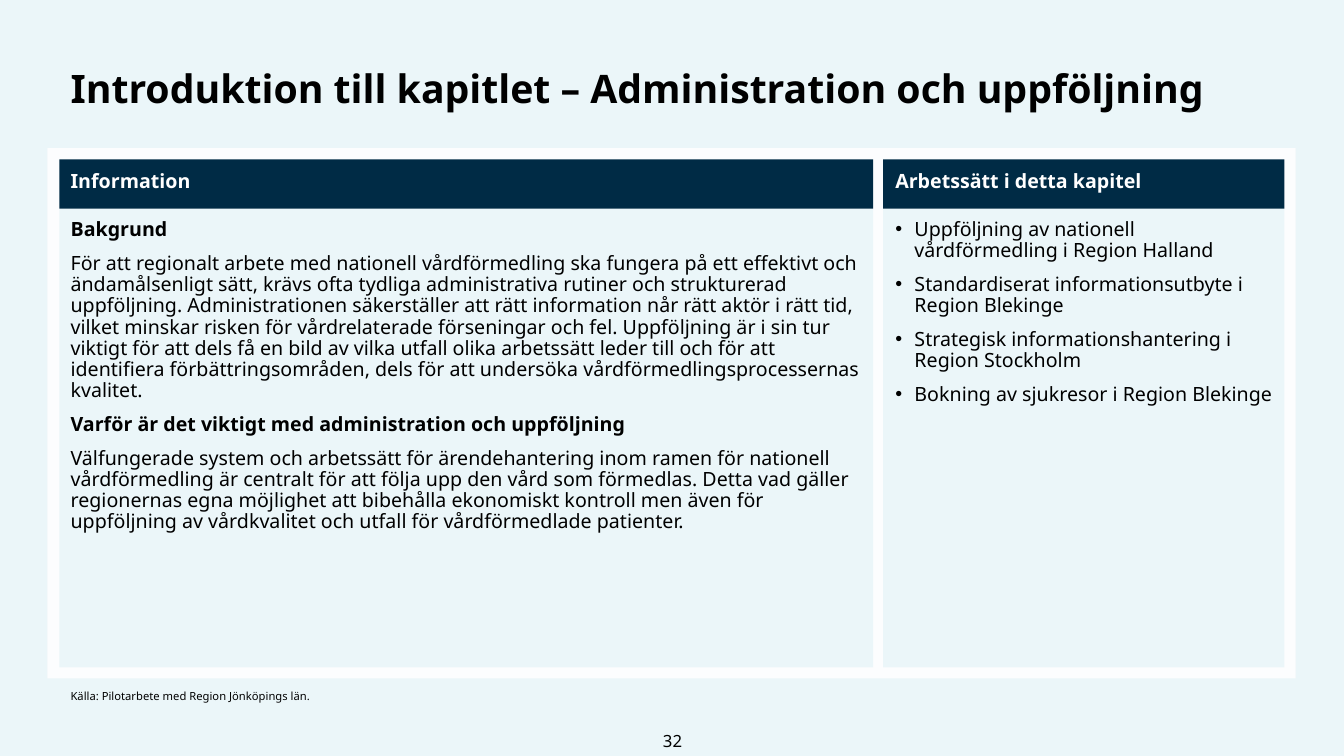
from lxml import etree
from pptx import Presentation, util as u
from pptx.dml.color import RGBColor
from pptx.enum import shapes, text
from pptx.oxml.ns import qn

BACKGROUND, NAVY, WHITE, BLACK = "EBF6F9", "002B45", "FFFFFF", "000000"
HEADER_TOP, HEADER_HEIGHT, BODY_HEIGHT = 1.58, 0.49, 4.55

INFORMATION = [
    ("Bakgrund", True),
    ("För att regionalt arbete med nationell vårdförmedling ska fungera på ett effektivt och "
     "ändamålsenligt sätt, krävs ofta tydliga administrativa rutiner och strukturerad uppföljning. "
     "Administrationen säkerställer att rätt information når rätt aktör i rätt tid, vilket minskar "
     "risken för vårdrelaterade förseningar och fel. Uppföljning är i sin tur viktigt för att dels "
     "få en bild av vilka utfall olika arbetssätt leder till och för att identifiera "
     "förbättringsområden, dels för att undersöka vårdförmedlingsprocessernas kvalitet.", False),
    ("Varför är det viktigt med administration och uppföljning", True),
    ("Välfungerade system och arbetssätt för ärendehantering inom ramen för nationell "
     "vårdförmedling är centralt för att följa upp den vård som förmedlas. Detta vad gäller "
     "regionernas egna möjlighet att bibehålla ekonomiskt kontroll men även för uppföljning av "
     "vårdkvalitet och utfall för vårdförmedlade patienter.", False),
]
WORKING_METHODS = [
    "Uppföljning av nationell vårdförmedling i Region Halland",
    "Standardiserat informationsutbyte i Region Blekinge",
    "Strategisk informationshantering i Region Stockholm",
    "Bokning av sjukresor i Region Blekinge",
]


def color(hex_string):
    return RGBColor.from_string(hex_string)


def write(paragraph, content, size=14, fill=BLACK, bold=False, align=text.PP_ALIGN.LEFT,
          spacing=1.0, after=0, bullet=None, indent=0):
    paragraph.text = content
    paragraph.alignment = align
    paragraph.line_spacing = spacing
    paragraph.space_before = u.Pt(0)
    paragraph.space_after = u.Pt(after)
    properties = paragraph._p.get_or_add_pPr()
    properties.set("marL", str(u.Inches(indent)))
    properties.set("indent", str(-u.Inches(indent)))
    if bullet:
        etree.SubElement(properties, qn("a:buFont"), typeface="Arial")
        etree.SubElement(properties, qn("a:buChar"), char=bullet)
    else:
        etree.SubElement(properties, qn("a:buNone"))
    font = paragraph.runs[0].font
    font.name = "Noto Sans"
    font.size = u.Pt(size)
    font.bold = bold
    font.color.rgb = color(fill)


class ChapterSlide:
    def __init__(self, presentation):
        self.slide = presentation.slides.add_slide(presentation.slide_layouts[3])
        self.slide.background.fill.solid()
        self.slide.background.fill.fore_color.rgb = color(BACKGROUND)

    def panel(self, left, top, width, height, fill, opacity=100):
        shape = self.slide.shapes.add_shape(
            shapes.MSO_SHAPE.RECTANGLE, *map(u.Inches, (left, top, width, height)))
        shape.shadow.inherit = False
        shape.fill.solid()
        shape.fill.fore_color.rgb = color(fill)
        shape.line.fill.background()
        if opacity < 100:
            fill_color = shape._element.spPr.find(qn("a:solidFill"))[0]
            etree.SubElement(fill_color, qn("a:alpha"), val=str(opacity * 1000))

    def frame(self, shape, margins, anchor=text.MSO_ANCHOR.TOP):
        frame = shape.text_frame
        frame.word_wrap = True
        frame.auto_size = text.MSO_AUTO_SIZE.NONE
        frame.vertical_anchor = anchor
        frame.margin_left, frame.margin_top, frame.margin_right, frame.margin_bottom = map(
            u.Inches, margins)
        return frame

    def placeholder(self, index, left, top, width, height, items, margins=(0, 0, 0, 0), **style):
        shape = self.slide.placeholders[index]
        shape.left, shape.top, shape.width, shape.height = map(
            u.Inches, (left, top, width, height))
        self.slide.shapes._spTree.append(shape._element)
        frame = self.frame(shape, margins)
        for position, (content, bold) in enumerate(items):
            paragraph = frame.add_paragraph() if position else frame.paragraphs[0]
            write(paragraph, content, bold=bold, **style)

    def label(self, left, top, width, height, content, margins=(0, 0.05, 0.1, 0.05),
              anchor=text.MSO_ANCHOR.TOP, **style):
        shape = self.slide.shapes.add_textbox(*map(u.Inches, (left, top, width, height)))
        write(self.frame(shape, margins, anchor).paragraphs[0], content, **style)

    def column(self, left, width, text_left, heading):
        self.panel(left, HEADER_TOP + HEADER_HEIGHT, width, BODY_HEIGHT, BACKGROUND)
        self.panel(left, HEADER_TOP, width, HEADER_HEIGHT, NAVY)
        self.label(text_left, 1.65, 3.04, 0.35, heading, fill=WHITE, bold=True, spacing=0.9)


def main():
    presentation = Presentation()
    presentation.slide_width = u.Inches(13.33)
    presentation.slide_height = u.Inches(7.5)

    chapter = ChapterSlide(presentation)
    chapter.panel(0.47, 1.47, 12.38, 5.26, WHITE, opacity=86)
    chapter.placeholder(
        0, 0.7, 0.59, 11.94, 0.8,
        [("Introduktion till kapitlet – Administration och uppföljning", True)],
        margins=(0, 0, 0.1, 0.05), size=28, spacing=1.1)
    chapter.column(0.59, 8.07, 0.7, "Information")
    chapter.column(8.76, 3.98, 8.88, "Arbetssätt i detta kapitel")
    chapter.placeholder(1, 0.7, 2.18, 7.85, 4.06, INFORMATION, spacing=0.9, after=9)
    chapter.placeholder(
        2, 8.88, 2.18, 3.76, 2.58, [(method, False) for method in WORKING_METHODS],
        spacing=0.9, after=9, bullet="•", indent=0.19)
    chapter.label(0.7, 6.81, 9.27, 0.37, "Källa: Pilotarbete med Region Jönköpings län.",
                  size=8, spacing=0.9)
    chapter.label(6.16, 7.21, 1.02, 0.27, "32", margins=(0.1, 0.05, 0.1, 0.05),
                  anchor=text.MSO_ANCHOR.MIDDLE, size=12, align=text.PP_ALIGN.CENTER)
    presentation.save("out.pptx")


if __name__ == "__main__":
    main()
